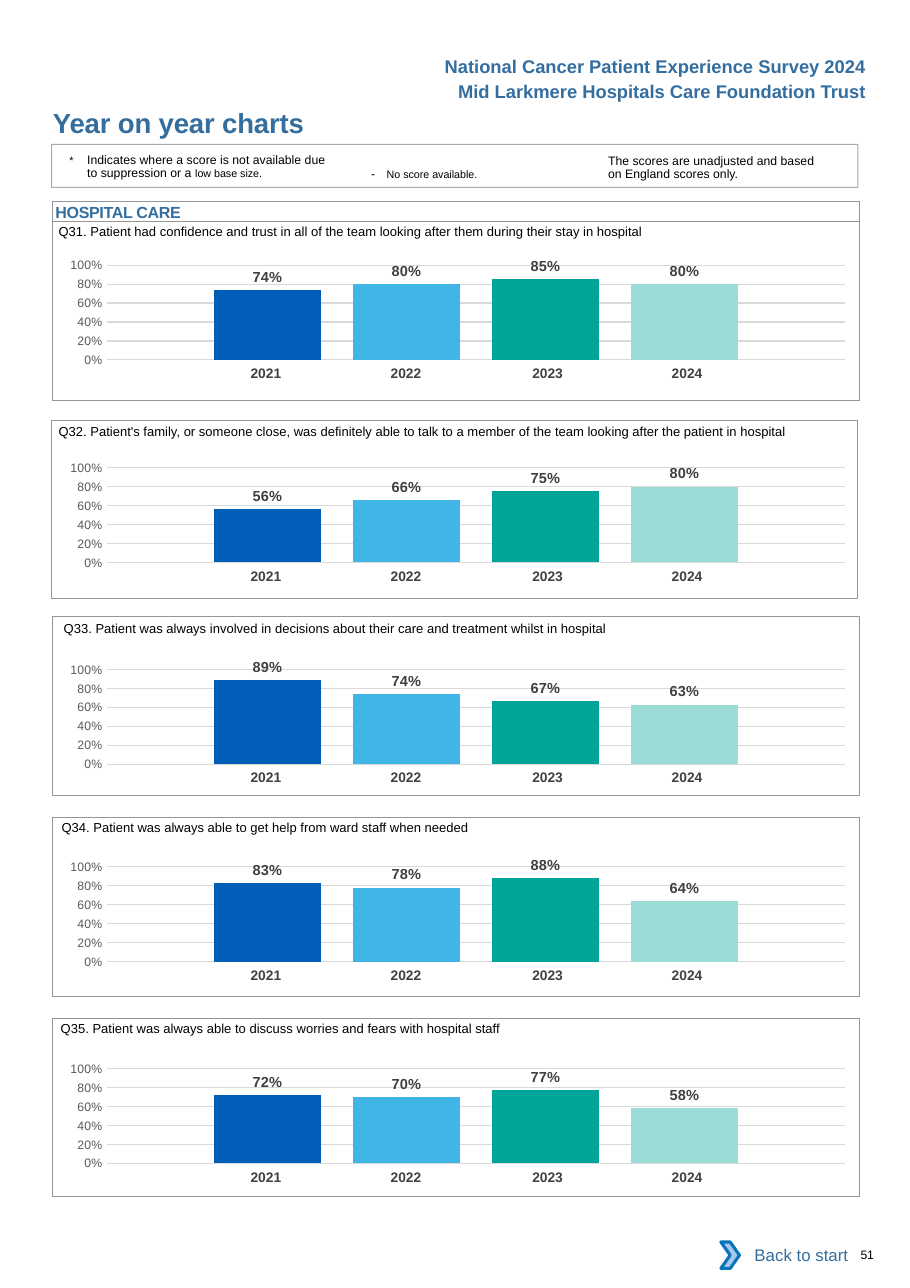
"""Build the year on year charts page for the hospital care questions."""
from dataclasses import dataclass
from typing import Optional

from pptx import Presentation
from pptx import util as u
from pptx.chart import data as chart_data
from pptx.dml.color import RGBColor
from pptx.enum import chart as charts, shapes, text
from pptx.oxml import parse_xml
from pptx.oxml.ns import nsdecls, qn

BLUE = RGBColor(0x33, 0x6E, 0x9F)
BLACK = RGBColor(0, 0, 0)
WHITE = RGBColor(255, 255, 255)
FRAME = RGBColor(0x93, 0x95, 0x98)
YEAR_TEXT = RGBColor(0x41, 0x40, 0x42)
SCORE_TEXT = RGBColor(0x40, 0x40, 0x40)
AXIS_TEXT = RGBColor(0x59, 0x59, 0x59)
GRID = RGBColor(0xD9, 0xD9, 0xD9)
CHEVRON_FILL = RGBColor(0xA8, 0xC7, 0xE9)
CHEVRON_LINE = RGBColor(0x0A, 0x74, 0xBB)
BARS = (RGBColor(0x00, 0x5E, 0xB8), RGBColor(0x41, 0xB6, 0xE6),
        RGBColor(0x00, 0xA4, 0x99), RGBColor(0x9C, 0xDC, 0xD7))
YEARS = ("2021", "2022", "2023", "2024")
YEAR_WIDTHS = (3.23, 3.23, 3.4, 3.23)
YEAR_RIGHT_INSETS = (0, 0, 0.1, 0.3)
PANEL_WIDTH, PANEL_HEIGHT = 18.59, 4.11
LEFT, RIGHT, CENTER = text.PP_ALIGN.LEFT, text.PP_ALIGN.RIGHT, text.PP_ALIGN.CENTER


@dataclass(frozen=True)
class Span:
    text: str
    size: float
    color: RGBColor = BLACK
    bold: bool = False
    spacing: float = 0


@dataclass(frozen=True)
class Box:
    left: float
    top: float
    width: float
    height: float


@dataclass(frozen=True)
class Label:
    box: Box
    spans: tuple[Span, ...]
    align: text.PP_ALIGN = LEFT
    insets: tuple[float, float, float, float] = (0, 0, 0, 0)
    line_pitch: Optional[float] = None
    hanging: float = 0


@dataclass(frozen=True)
class Question:
    text: str
    text_left: float
    text_top: float
    panel_left: float
    panel_top: float
    chart_top: float
    scores: tuple[float, ...]


QUESTIONS = (
    Question("Q31. Patient had confidence and trust in all of the team looking after them during their stay in hospital",
             1.35, 4.93, 1.22, 5.11, 5.64, (0.74, 0.8, 0.85, 0.8)),
    Question("Q32. Patient's family, or someone close, was definitely able to talk to a member of the team "
             "looking after the patient in hospital",
             1.35, 9.53, 1.19, 9.68, 10.31, (0.56, 0.66, 0.75, 0.8)),
    Question("Q33. Patient was always involved in decisions about their care and treatment whilst in hospital",
             1.47, 14.07, 1.22, 14.22, 14.96, (0.89, 0.74, 0.67, 0.63)),
    Question("Q34. Patient was always able to get help from ward staff when needed",
             1.42, 18.67, 1.22, 18.85, 19.51, (0.83, 0.78, 0.88, 0.64)),
    Question("Q35. Patient was always able to discuss worries and fears with hospital staff",
             1.4, 23.29, 1.22, 23.47, 24.16, (0.72, 0.7, 0.77, 0.58)),
)
HEADER_INSETS = (0.25, 0.13, 0.25, 0.13)
LABELS = (
    Label(Box(9.22, 1.15, 11, 0.76),
          (Span("National Cancer Patient Experience Survey 2024", 12, BLUE, True),), RIGHT, HEADER_INSETS),
    Label(Box(9.22, 1.73, 11, 0.76),
          (Span("Mid Larkmere Hospitals Care Foundation Trust", 12, BLUE, True),), RIGHT, HEADER_INSETS),
    Label(Box(1.22, 2.44, 11.43, 0.76), (Span("Year on year charts", 18, BLUE, True, -0.1),)),
    Label(Box(1.6, 3.49, 6.1, 0.7),
          (Span("*\t", 7), Span("Indicates where a score is not available due to suppression or a ", 8),
           Span("low base size.", 7)), insets=(0, 0.08, 0, 0), line_pitch=8.1, hanging=0.41),
    Label(Box(8.31, 3.71, 4.65, 0.61), (Span("- ", 8, spacing=2.6), Span("No score available.", 7)),
          insets=(0.25, 0.13, 0.25, 0.13)),
    Label(Box(14.02, 3.51, 4.95, 0.69), (Span("The scores are unadjusted and based on England scores only.", 8),),
          insets=(0, 0.08, 0, 0), line_pitch=8.1),
    Label(Box(19.84, 28.76, 1.04, 0.33), (Span("51", 8, spacing=-0.2),)),
)


def place(box: Box) -> tuple[u.Length, ...]:
    return u.Cm(box.left), u.Cm(box.top), u.Cm(box.width), u.Cm(box.height)


def write(frame, spans: tuple[Span, ...], align=LEFT, insets=(0, 0, 0, 0)) -> None:
    frame.word_wrap = True
    frame.margin_left, frame.margin_top, frame.margin_right, frame.margin_bottom = map(u.Cm, insets)
    para = frame.paragraphs[0]
    para.text = spans[0].text
    for span in spans[1:]:
        para.add_run().text = span.text
    para.alignment = align
    for run, span in zip(para.runs, spans):
        style(run.font, span.size, span.color, span.bold)
        if span.spacing:
            run._r.get_or_add_rPr().set("spc", str(round(span.spacing * 100)))


def style(font, size: float, color: RGBColor, bold: bool = False) -> None:
    font.name, font.size, font.bold = "Arial", u.Pt(size), bold
    font.color.rgb = color


def add_label(page, label: Label) -> None:
    frame = page.shapes.add_textbox(*place(label.box)).text_frame
    write(frame, label.spans, label.align, label.insets)
    para = frame.paragraphs[0]
    if label.line_pitch:
        para.line_spacing = u.Pt(label.line_pitch)
    if label.hanging:
        properties = para._p.get_or_add_pPr()
        properties.set("marL", str(u.Cm(label.hanging)))
        properties.set("indent", str(-u.Cm(label.hanging)))


def add_block(page, box: Box, fill: Optional[RGBColor] = None, line: Optional[RGBColor] = FRAME,
              weight: float = 0.5, kind=shapes.MSO_SHAPE.RECTANGLE):
    block = page.shapes.add_shape(kind, *place(box))
    block.shadow.inherit = False
    if fill is None:
        block.fill.background()
    else:
        block.fill.solid()
        block.fill.fore_color.rgb = fill
    if line is None:
        block.line.fill.background()
    else:
        block.line.color.rgb = line
        block.line.width = u.Pt(weight)
    return block


def add_years(page, top: float) -> None:
    box = Box(4.39, top, sum(YEAR_WIDTHS), 0.69)
    graphic = page.shapes.add_table(1, len(YEARS), *place(box))
    table = graphic.table
    table.first_row = table.horz_banding = False
    for index, (year, width, inset) in enumerate(zip(YEARS, YEAR_WIDTHS, YEAR_RIGHT_INSETS)):
        table.columns[index].width = u.Cm(width)
        cell = table.cell(0, index)
        cell.fill.background()
        write(cell.text_frame, (Span(year, 9, YEAR_TEXT, True),), CENTER)
        cell.margin_left, cell.margin_right = u.Cm(0.25), u.Cm(inset)
        cell.margin_top = cell.margin_bottom = u.Cm(0.13)
        for side in ("a:lnL", "a:lnR", "a:lnT", "a:lnB"):
            border = parse_xml(f'<{side} {nsdecls("a")} w="0"><a:noFill/></{side}>')
            properties = cell._tc.get_or_add_tcPr()
            properties.insert(len(properties) - 1, border)


def add_scores(page, top: float, scores: tuple[float, ...]) -> None:
    source = chart_data.CategoryChartData(number_format="0%")
    source.categories = ["1"]
    for number, score in enumerate(scores, 1):
        source.add_series(f"Series {number}", [score])
    chart = page.shapes.add_chart(charts.XL_CHART_TYPE.COLUMN_CLUSTERED,
                                  *place(Box(1, top, 18.59, 3.28)), source).chart
    chart.has_title = chart.has_legend = False
    chart.font.name, chart.font.size = "Calibri", u.Pt(10)
    chart.font.color.rgb = BLACK
    chart.category_axis.visible = False
    axis = chart.value_axis
    axis.minimum_scale, axis.maximum_scale, axis.major_unit = 0, 1, 0.2
    axis.major_tick_mark = axis.minor_tick_mark = charts.XL_TICK_MARK.NONE
    axis.format.line.fill.background()
    axis.major_gridlines.format.line.color.rgb = GRID
    axis.major_gridlines.format.line.width = u.Pt(0.75)
    axis.tick_labels.number_format, axis.tick_labels.number_format_is_linked = "0%", False
    style(axis.tick_labels.font, 8, AXIS_TEXT)
    plot = chart.plots[0]
    plot.gap_width, plot.overlap, plot.vary_by_categories = 200, -30, False
    for series, color in zip(plot.series, BARS):
        series.format.fill.solid()
        series.format.fill.fore_color.rgb = color
        labels = series.data_labels
        labels.show_value = True
        labels.position = charts.XL_LABEL_POSITION.OUTSIDE_END
        labels.number_format, labels.number_format_is_linked = "0%", False
        style(labels.font, 9.5, SCORE_TEXT, True)
    area = chart._chartSpace.chart.plotArea
    for layout in area.findall(qn("c:layout")):
        area.remove(layout)
    sizes = "".join(f'<c:{tag} val="{value}"/>' for tag, value in
                    (("layoutTarget", "inner"), ("xMode", "edge"), ("yMode", "edge"),
                     ("x", 0.079), ("y", 0.145), ("w", 0.915), ("h", 0.666)))
    area.insert(0, parse_xml(f'<c:layout {nsdecls("c")}><c:manualLayout>{sizes}</c:manualLayout></c:layout>'))


def main() -> None:
    deck = Presentation()
    deck.slide_width, deck.slide_height = u.Cm(20.98), u.Cm(29.69)
    page = deck.slides.add_slide(deck.slide_layouts[6])
    for item in QUESTIONS:
        add_years(page, item.chart_top + 2.67)
        add_scores(page, item.chart_top, item.scores)
        add_block(page, Box(item.panel_left, item.panel_top, PANEL_WIDTH, PANEL_HEIGHT))
        add_label(page, Label(Box(item.text_left, item.text_top, 18.3, 0.61),
                              (Span(item.text, 8.5),), insets=(0, 0.23, 0, 0)))
    section = add_block(page, Box(1.22, 4.65, PANEL_WIDTH, 0.46))
    section.text_frame.vertical_anchor = text.MSO_ANCHOR.TOP
    write(section.text_frame, (Span("HOSPITAL CARE", 10.5, BLUE, True, -0.2),), insets=(0.06, 0.01, 0, 0))
    legend = add_block(page, Box(1.19, 3.33, PANEL_WIDTH, 0.99), weight=0.75)
    tint = legend.line._ln.find(".//" + qn("a:srgbClr"))
    tint.append(parse_xml(f'<a:alpha {nsdecls("a")} val="80000"/>'))
    for label in LABELS:
        add_label(page, label)
    button = add_block(page, Box(16.81, 28.4, 3, 1.07), WHITE, None)
    write(button.text_frame, (Span("Back to start", 11, BLUE),), RIGHT, HEADER_INSETS)
    add_block(page, Box(16.62, 28.63, 0.43, 0.61), CHEVRON_FILL, CHEVRON_LINE, 2, shapes.MSO_SHAPE.CHEVRON)
    deck.save("out.pptx")


if __name__ == "__main__":
    main()
